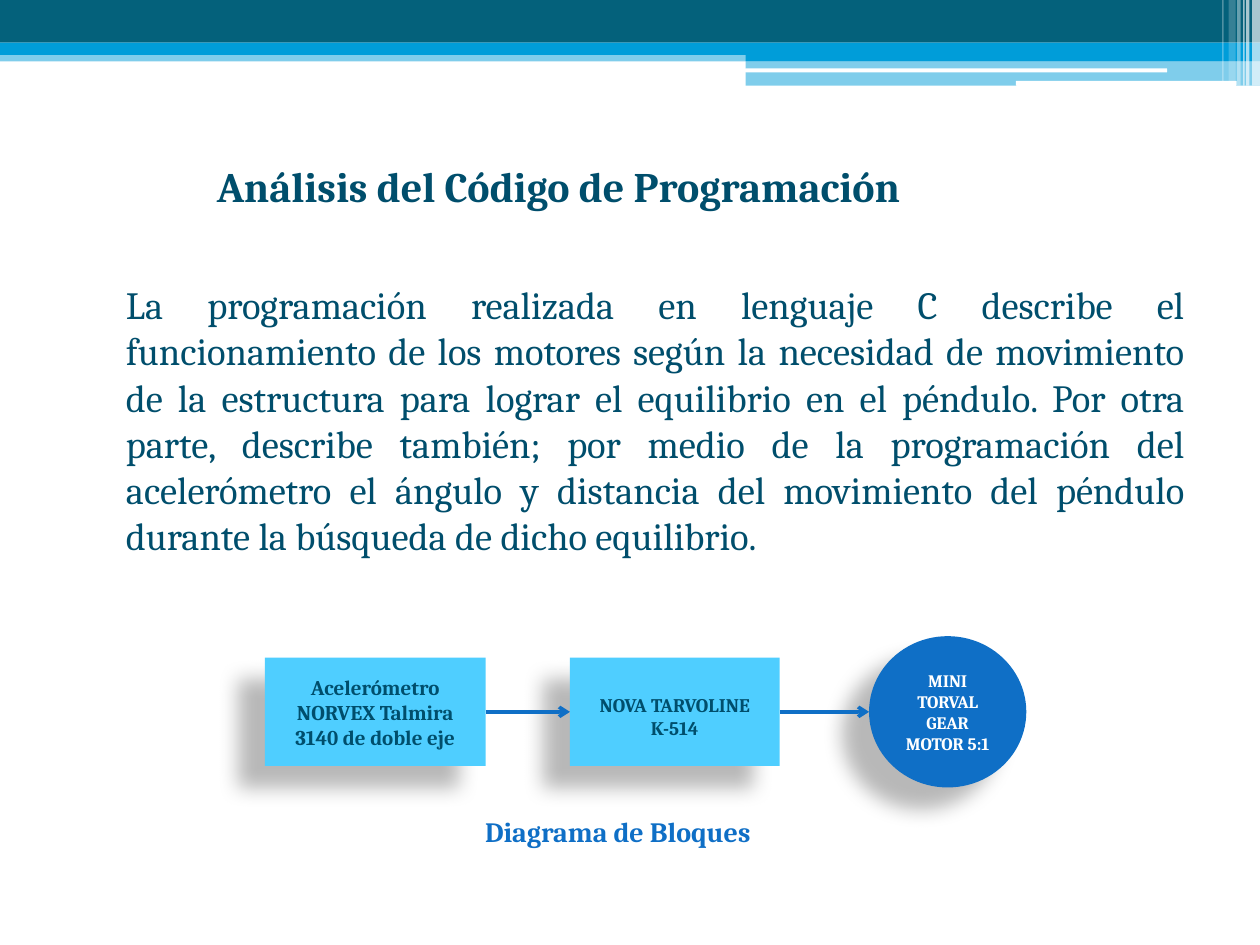
from lxml import etree
from pptx import Presentation
from pptx.dml.color import RGBColor
from pptx.enum.shapes import MSO_CONNECTOR, MSO_SHAPE
from pptx.enum.text import MSO_ANCHOR, PP_ALIGN
from pptx.oxml.ns import qn
from pptx.util import Cm, Pt

FONT = "Cambria"
COLORS = {
    "teal": "04617B", "cyan": "009DD9", "white": "FFFFFF", "ink": "004E6C",
    "sky": "4FCEFF", "blue": "0F6FC6", "black": "000000",
}

TITLE = "Análisis del Código de Programación"
BODY = (
    "La programación realizada en lenguaje C describe el funcionamiento de los "
    "motores según la necesidad de movimiento de la estructura para lograr el "
    "equilibrio en el péndulo. Por otra parte, describe también; por medio de la "
    "programación del acelerómetro el ángulo y distancia del movimiento del "
    "péndulo durante la búsqueda de dicho equilibrio."
)
CAPTION = "Diagrama de Bloques"

RECT, ROUND, OVAL = MSO_SHAPE.RECTANGLE, MSO_SHAPE.ROUNDED_RECTANGLE, MSO_SHAPE.OVAL

BANDS = [
    (RECT, 0, 1.02, 25.4, 0.22, "cyan", 50),
    (RECT, 0, 0, 25.4, 0.86, "teal", 100),
    (RECT, 0, 0.86, 25.4, 0.25, "cyan", 100),
    (RECT, 15.03, 0.98, 10.37, 0.25, "cyan", 100),
    (RECT, 15.03, 1.23, 10.37, 0.5, "cyan", 50),
    (ROUND, 15.02, 1.38, 8.51, 0.08, "white", 100),
    (ROUND, 20.48, 1.63, 4.45, 0.1, "white", 100),
]
STRIPES = [
    (25.24, 0.16, 1.73, 65), (25.12, 0.07, 1.73, 65), (25.06, 0.03, 1.73, 60),
    (24.94, 0.07, 1.73, 40), (24.77, 0.14, 1.63, 20), (24.64, 0.03, 1.63, 30),
]

AXIS = 14.35
BLOCKS = [
    ("Acelerómetro NORVEX Talmira 3140 de doble eje", RECT, 5.34, 4.45, 2.18, "sky", "ink", 12, 0.13),
    ("NOVA TARVOLINE K-514", RECT, 11.49, 4.23, 2.18, "sky", "ink", 11, 0.3),
    ("MINI TORVAL GEAR MOTOR 5:1", OVAL, 17.52, 3.17, 3.05, "blue", "white", 10, 0.13),
]


def color(name):
    return RGBColor.from_string(COLORS[name])


def add_filled(slide, kind, left, top, width, height, fill, opacity=100):
    shape = slide.shapes.add_shape(kind, Cm(left), Cm(top), Cm(width), Cm(height))
    shape.shadow.inherit = False
    shape.fill.solid()
    shape.fill.fore_color.rgb = color(fill)
    shape.line.fill.background()
    if opacity < 100:
        fill_color = shape.fill._xPr.find(qn("a:solidFill"))[0]
        etree.SubElement(fill_color, qn("a:alpha"), val=str(opacity * 1000))
    return shape


def add_shadow(shape):
    effects = shape._element.spPr.find(qn("a:effectLst"))
    shadow = etree.SubElement(
        effects, qn("a:outerShdw"), blurRad=str(Pt(11.8)), dist=str(Pt(19.7)),
        dir=str(141 * 60000), algn="ctr", rotWithShape="0",
    )
    shade = etree.SubElement(shadow, qn("a:srgbClr"), val=COLORS["black"])
    etree.SubElement(shade, qn("a:alpha"), val="28000")


def write(shape, text, size, font_color, bold=True, align=PP_ALIGN.LEFT, anchor=MSO_ANCHOR.TOP):
    frame = shape.text_frame
    frame.text = text
    frame.word_wrap = True
    frame.vertical_anchor = anchor
    paragraph = frame.paragraphs[0]
    paragraph.alignment = align
    font = paragraph.runs[0].font
    font.name, font.size, font.bold = FONT, Pt(size), bold
    font.color.rgb = color(font_color)
    return frame


def clear_margins(frame):
    frame.margin_left = frame.margin_right = frame.margin_top = frame.margin_bottom = 0


def add_arrow(slide, start, end):
    arrow = slide.shapes.add_connector(
        MSO_CONNECTOR.STRAIGHT, start.left + start.width, Cm(AXIS), end.left, Cm(AXIS)
    )
    arrow.begin_connect(start, 3)
    if end.auto_shape_type == RECT:
        arrow.end_connect(end, 1)
    arrow.line.color.rgb = color("blue")
    arrow.line.width = Pt(2)
    etree.SubElement(arrow.line._get_or_add_ln(), qn("a:tailEnd"), type="arrow")
    etree.SubElement(arrow._element.spPr, qn("a:effectLst"))


def main():
    presentation = Presentation()
    presentation.slide_width, presentation.slide_height = Cm(25.4), Cm(19.05)
    slide = presentation.slides.add_slide(presentation.slide_layouts[5])

    for kind, left, top, width, height, fill, opacity in BANDS:
        add_filled(slide, kind, left, top, width, height, fill, opacity)
    for left, width, height, opacity in STRIPES:
        add_filled(slide, RECT, left, 0, width, height, "white", opacity)

    title = slide.shapes.title
    title.left, title.top, title.width, title.height = Cm(4.37), Cm(3.24), Cm(19.5), Cm(1.1)
    clear_margins(write(title, TITLE, 24, "ink"))

    body = slide.shapes.add_textbox(Cm(2.54), Cm(5.67), Cm(21.34), Cm(5.7))
    clear_margins(write(body, BODY, 22, "ink", bold=False, align=PP_ALIGN.JUSTIFY))

    blocks = []
    for text, kind, left, width, height, fill, font_color, size, margin_top in BLOCKS:
        block = add_filled(slide, kind, left, AXIS - height / 2, width, height, fill)
        add_shadow(block)
        frame = write(block, text, size, font_color, align=PP_ALIGN.CENTER, anchor=MSO_ANCHOR.MIDDLE)
        frame.margin_top = Cm(margin_top)
        blocks.append(block)

    for start, end in zip(blocks, blocks[1:]):
        add_arrow(slide, start, end)

    caption = slide.shapes.add_textbox(Cm(9.53), Cm(16.3), Cm(6.78), Cm(0.94))
    write(caption, CAPTION, 16, "blue").word_wrap = False

    presentation.save("out.pptx")


if __name__ == "__main__":
    main()
